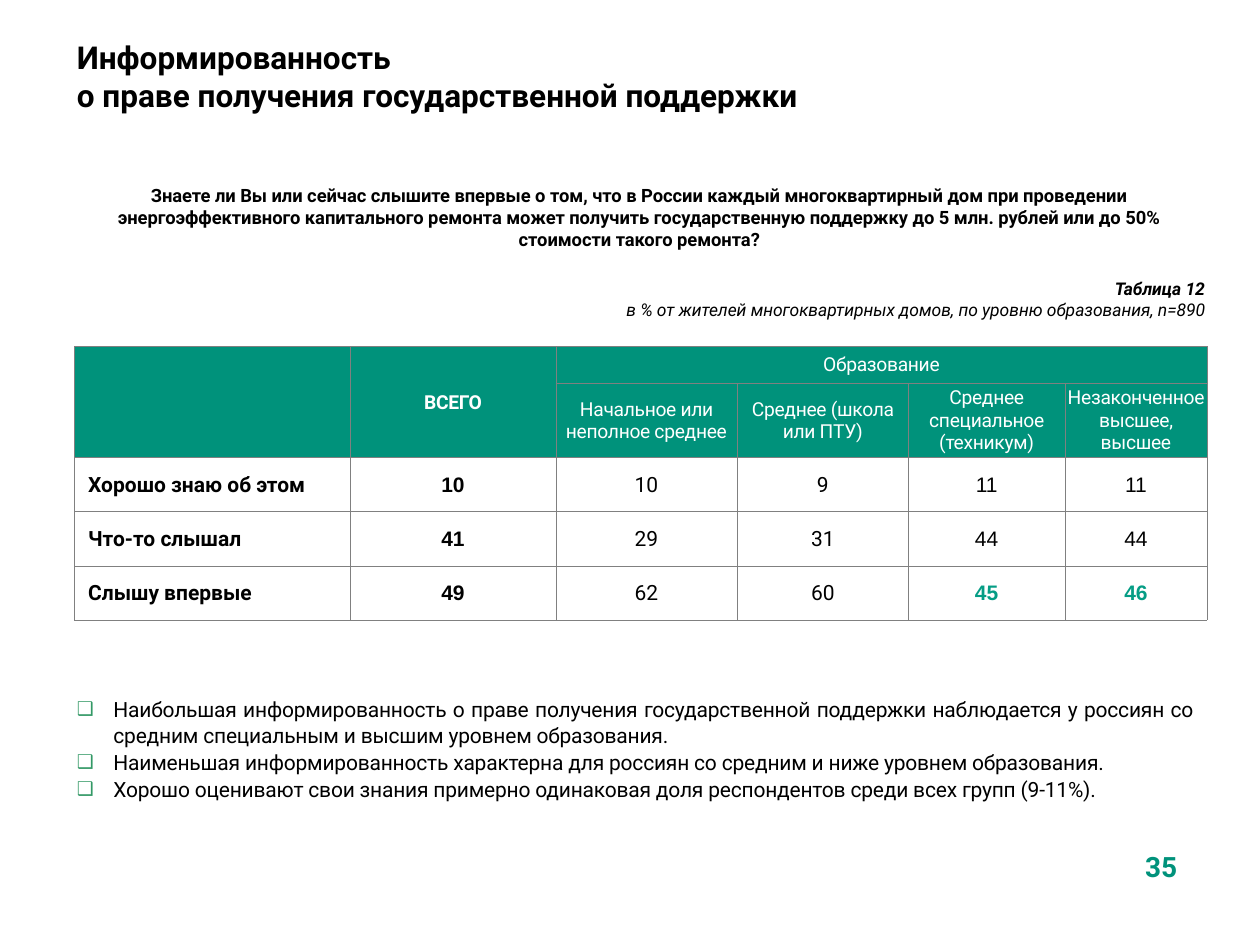
from lxml import etree
from pptx import Presentation
from pptx.dml.color import RGBColor
from pptx.enum.text import MSO_ANCHOR, MSO_AUTO_SIZE, PP_ALIGN
from pptx.oxml.ns import qn
from pptx.util import Pt

LEFT, CENTER, RIGHT, JUSTIFY = PP_ALIGN.LEFT, PP_ALIGN.CENTER, PP_ALIGN.RIGHT, PP_ALIGN.JUSTIFY
TOP, MIDDLE = MSO_ANCHOR.TOP, MSO_ANCHOR.MIDDLE
FONT, NUMBER_FONT = "Roboto", "Arial"
BLACK, WHITE, GREEN, ACCENT = "000000", "FFFFFF", "00927B", "059D85"
BULLET_GREEN, GRID = "339966", "808080"

# Content
TITLE = "Информированность\vо праве получения государственной поддержки"
QUESTION = ("Знаете ли Вы или сейчас слышите впервые о том, что в России каждый "
            "многоквартирный дом при проведении энергоэффективного капитального ремонта "
            "может получить государственную поддержку до 5 млн. рублей или до 50% "
            "стоимости такого ремонта?")
CAPTION = ["Таблица 12",
           "в % от жителей многоквартирных домов, по уровню образования, n=890"]
TOTAL, GROUP = "ВСЕГО", "Образование"
LEVELS = ["Начальное или неполное среднее", "Среднее (школа или ПТУ)",
          "Среднее специальное (техникум)", "Незаконченное высшее, высшее"]
ANSWERS = [("Хорошо знаю об этом", 10, 10, 9, 11, 11),
           ("Что-то слышал", 41, 29, 31, 44, 44),
           ("Слышу впервые", 49, 62, 60, 45, 46)]
HIGHLIGHTED = {(2, 4), (2, 5)}  # answer row, column
NUMBER_FONT_COLUMNS = {1, 4, 5}
FINDINGS = [
    "Наибольшая информированность о праве получения государственной поддержки наблюдается "
    "у россиян со средним специальным и высшим уровнем образования.",
    "Наименьшая информированность характерна для россиян со средним и ниже уровнем образования.",
    "Хорошо оценивают свои знания примерно одинаковая доля респондентов среди всех групп (9-11%)."]
PAGE = "35"

# Layout in points
COLUMN_WIDTHS = [157.7, 117.4, 103.7, 97.9, 89.3, 81.4]
ROW_HEIGHTS = [20.9, 42.5, 31, 31, 31]
TABLE_LEFT, TABLE_TOP = 42.5, 198


def color(hex_value):
    return RGBColor.from_string(hex_value)


def format_paragraph(paragraph, size, hex_value=BLACK, bold=False, italic=False,
                     align=LEFT, font=FONT, tracking=0):
    paragraph.alignment = align
    paragraph.line_spacing = 1.0
    paragraph.space_before = Pt(0)
    for run in paragraph.runs:
        run.font.name, run.font.size = font, Pt(size)
        run.font.bold, run.font.italic = bold, italic
        run.font.color.rgb = color(hex_value)
        if tracking:
            run._r.get_or_add_rPr().set("spc", str(round(tracking * 100)))


def place(shape, left, top, width, height):
    shape.left, shape.top, shape.width, shape.height = map(Pt, (left, top, width, height))
    frame = shape.text_frame
    frame.word_wrap = True
    frame.auto_size = MSO_AUTO_SIZE.NONE
    frame.vertical_anchor = TOP
    return frame


def add_text(slide, box, lines):
    frame = place(slide.shapes.add_textbox(0, 0, 0, 0), *box)
    frame.text = "\n".join(lines)
    return frame.paragraphs


def add_bullet(paragraph):
    properties = paragraph._p.get_or_add_pPr()
    properties.set("marL", str(Pt(20.9)))
    properties.set("indent", str(-Pt(20.9)))
    bullet_color = etree.SubElement(properties, qn("a:buClr"))
    etree.SubElement(bullet_color, qn("a:srgbClr"), val=BULLET_GREEN)
    etree.SubElement(properties, qn("a:buSzPct"), val="90000")
    etree.SubElement(properties, qn("a:buFont"), typeface=FONT)
    etree.SubElement(properties, qn("a:buChar"), char="❑")


def style_cell(cell, fill):
    cell.vertical_anchor = MIDDLE
    cell.margin_left = cell.margin_right = cell.margin_top = Pt(0.7)
    cell.margin_bottom = Pt(0)
    properties = cell._tc.get_or_add_tcPr()
    for side in ("lnL", "lnR", "lnT", "lnB"):
        line = etree.SubElement(properties, qn(f"a:{side}"), w=str(Pt(0.25)))
        line_fill = etree.SubElement(line, qn("a:solidFill"))
        etree.SubElement(line_fill, qn("a:srgbClr"), val=GRID)
    if fill:
        cell.fill.solid()
        cell.fill.fore_color.rgb = color(fill)
    else:
        cell.fill.background()


def write_cell(cell, text, size, **style):
    cell.text_frame.text = str(text)
    format_paragraph(cell.text_frame.paragraphs[0], size, **style)


def add_answer_table(slide):
    table = slide.shapes.add_table(
        len(ROW_HEIGHTS), len(COLUMN_WIDTHS), Pt(TABLE_LEFT), Pt(TABLE_TOP),
        Pt(sum(COLUMN_WIDTHS)), Pt(sum(ROW_HEIGHTS))).table
    for column, width in zip(table.columns, COLUMN_WIDTHS):
        column.width = Pt(width)
    for row, height in zip(table.rows, ROW_HEIGHTS):
        row.height = Pt(height)
    for r in range(len(ROW_HEIGHTS)):
        for c in range(len(COLUMN_WIDTHS)):
            style_cell(table.cell(r, c), GREEN if r < 2 else WHITE if c < 2 else None)

    # Two-level header
    for first, last in [((0, 0), (1, 0)), ((0, 1), (1, 1)), ((0, 2), (0, 5))]:
        table.cell(*first).merge(table.cell(*last))
    headers = [(0, 1, TOTAL), (0, 2, GROUP)]
    headers += [(1, c, level) for c, level in enumerate(LEVELS, 2)]
    for r, c, text in headers:
        write_cell(table.cell(r, c), text, 11, hex_value=WHITE, bold=text == TOTAL,
                   align=CENTER, tracking=-0.2)

    # Answers
    for r, answer in enumerate(ANSWERS):
        for c, value in enumerate(answer):
            marked = (r, c) in HIGHLIGHTED
            cell = table.cell(r + 2, c)
            write_cell(cell, value, 12, hex_value=ACCENT if marked else BLACK,
                       bold=c < 2 or marked, align=CENTER if c else LEFT,
                       font=NUMBER_FONT if c in NUMBER_FONT_COLUMNS else FONT)
            if c == 0:
                cell.margin_left = Pt(7.9)


def main():
    presentation = Presentation()
    presentation.slide_width, presentation.slide_height = Pt(720), Pt(540)
    slide = presentation.slides.add_slide(presentation.slide_layouts[1])

    # Title
    frame = place(slide.shapes.title, 36.7, 18, 643, 51.1)
    frame.text = TITLE
    format_paragraph(frame.paragraphs[0], 18, bold=True)

    # Question and table caption
    question, = add_text(slide, (36.7, 101.5, 657.4, 46), [QUESTION])
    format_paragraph(question, 10.5, bold=True, align=CENTER)
    for i, paragraph in enumerate(add_text(slide, (59.8, 155.5, 635.8, 43.9), CAPTION)):
        format_paragraph(paragraph, 10, bold=i == 0, italic=True, align=RIGHT)

    add_answer_table(slide)

    # Findings
    frame = place(slide.placeholders[1], 36.7, 394.6, 653, 73.4)
    frame.text = "\n".join(FINDINGS)
    for i, paragraph in enumerate(frame.paragraphs):
        add_bullet(paragraph)
        format_paragraph(paragraph, 12, align=JUSTIFY, tracking=-0.1)
        paragraph.space_before = Pt(1.2 if i else 0)

    # Page number
    page, = add_text(slide, (632.2, 481.7, 62.6, 37.4), [PAGE])
    format_paragraph(page, 16, hex_value=GREEN, bold=True, align=CENTER)

    presentation.save("out.pptx")


if __name__ == "__main__":
    main()
